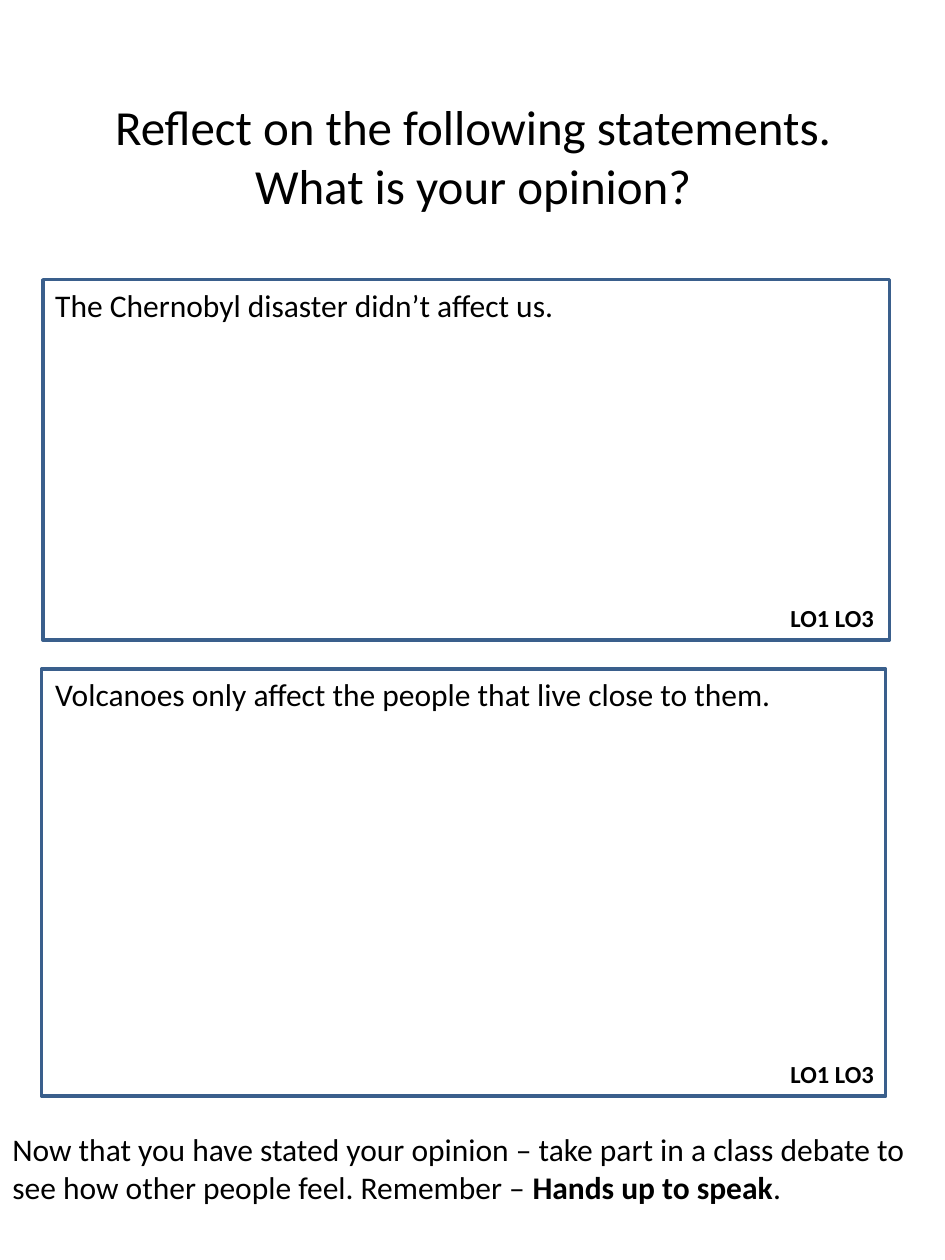
from pptx import Presentation
from pptx.dml.color import RGBColor
from pptx.enum.shapes import MSO_SHAPE
from pptx.enum.text import MSO_ANCHOR, MSO_AUTO_SIZE, PP_ALIGN
from pptx.util import Inches, Pt

RECT = MSO_SHAPE.RECTANGLE
MIDDLE, TOP = MSO_ANCHOR.MIDDLE, MSO_ANCHOR.TOP
LEFT, CENTER = PP_ALIGN.LEFT, PP_ALIGN.CENTER
FIXED = MSO_AUTO_SIZE.NONE


def color(value):
    return RGBColor.from_string(value)


def write(sp, *lines, size=18, bold=False, align=LEFT, anchor=TOP, wrap=False):
    """Fill a shape with lines; a line is a string or a list of (text, bold) runs."""
    tf = sp.text_frame
    tf.word_wrap, tf.auto_size, tf.vertical_anchor = wrap, FIXED, anchor
    for i, line in enumerate(lines):
        p = tf.add_paragraph() if i else tf.paragraphs[0]
        p.alignment = align
        for text, is_bold in [(line, bold)] if isinstance(line, str) else line:
            r = p.add_run()
            r.text = text
            r.font.name, r.font.size, r.font.bold = "Calibri", Pt(size), is_bold
            r.font.color.rgb = color("000000")


prs = Presentation()
prs.slide_width, prs.slide_height = Inches(7.5), Inches(10)
slide = prs.slides.add_slide(prs.slide_layouts[5])

title = slide.shapes.title
title.left, title.top = Inches(0.38), Inches(0.4)
title.width, title.height = Inches(6.75), Inches(1.67)
write(title, "Reflect on the following statements. What is your opinion?",
      size=28, align=CENTER, anchor=MIDDLE, wrap=True)

# Answer boxes: left, top, width, height, statement, statement width
boxes = [
    (0.34, 2.22, 6.72, 2.86, "The Chernobyl disaster didn’t affect us.", 4.27),
    (0.33, 5.31, 6.7, 3.39,
     "Volcanoes only affect the people that live close to them.", 5.96),
]
tag_width, tag_height = 0.87, 0.34
for left, top, width, height, statement, text_width in boxes:
    box = slide.shapes.add_shape(
        RECT, Inches(left), Inches(top), Inches(width), Inches(height))
    box.shadow.inherit = False
    box.fill.background()
    box.line.color.rgb = color("3A5F8C")
    box.line.width = Pt(2)

    prompt = slide.shapes.add_textbox(
        Inches(0.34), Inches(top), Inches(text_width), Inches(0.71))
    write(prompt, statement)

    tag = slide.shapes.add_textbox(
        Inches(7.04 - tag_width), Inches(top + height - tag_height),
        Inches(tag_width), Inches(tag_height))
    write(tag, "LO1 LO3", size=14, bold=True, align=CENTER)

closing = slide.shapes.add_textbox(0, Inches(8.92), Inches(7.43), Inches(0.71))
write(closing,
      "Now that you have stated your opinion – take part in a class debate to",
      [("see how other people feel. Remember – ", False),
       ("Hands up to speak", True), (".", False)])

prs.save("out.pptx")
